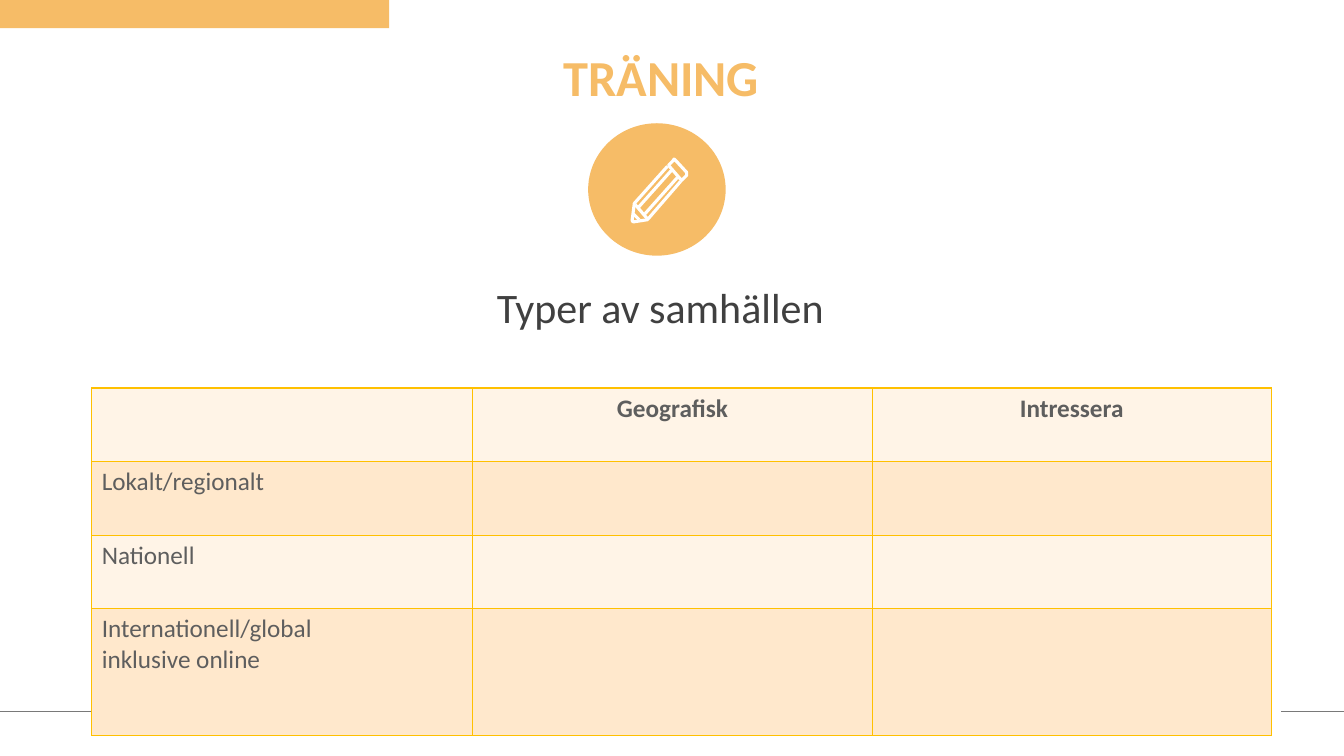
from lxml import etree
from pptx import Presentation
from pptx.dml.color import RGBColor
from pptx.enum import shapes, text
from pptx.oxml import ns
from pptx.util import Inches, Pt

FONT = "Calibri"
ORANGE, WHITE, GREY = "F6BC67", "FFFFFF", "5E5E5E"
GOLD = "FFC000"
BANDS = ["FFF4E7", "FFE8CC"]
COLUMNS = [3.78, 3.96, 3.96]
ROWS = [0.73, 0.73, 0.73, 1.26]
COMMUNITIES = [
    [[], ["Geografisk"], ["Intressera"]],
    [["Lokalt/regionalt"], [], []],
    [["Nationell"], [], []],
    [["Internationell/global", "inklusive online"], [], []],
]
PENCIL = [
    [(6.81, 1.71), (6.7, 1.59), (6.69, 1.58), (6.68, 1.58), (6.68, 1.59),
     (6.63, 1.64), (6.76, 1.79), (6.81, 1.74), (6.81, 1.71)],
    [(6.72, 1.76), (6.39, 2.13)],
    [(6.62, 1.65), (6.29, 2.02), (6.29, 2.03), (6.27, 2.18), (6.27, 2.19),
     (6.28, 2.2), (6.29, 2.2), (6.42, 2.18), (6.43, 2.17), (6.75, 1.8)],
    [(6.33, 2.06), (6.66, 1.69)],
    [(6.34, 2.18), (6.28, 2.12)],
    [(6.3, 2.03), (6.42, 2.17)],
]


def colour(value):
    return RGBColor.from_string(value)


def add_run(paragraph, words, size, tint, bold=False):
    run = paragraph.add_run()
    run.text = words
    run.font.name = FONT
    run.font.size = Pt(size)
    run.font.bold = bold
    run.font.color.rgb = colour(tint)


def add_filled(slide, preset, box, outlined=False):
    figure = slide.shapes.add_shape(preset, *map(Inches, box))
    figure.shadow.inherit = False
    figure.fill.solid()
    figure.fill.fore_color.rgb = colour(ORANGE)
    if outlined:
        figure.line.color.rgb = colour(ORANGE)
        figure.line.width = Pt(1)
    else:
        figure.line.fill.background()


def add_rule(slide, start, end, y):
    rule = slide.shapes.add_connector(
        shapes.MSO_CONNECTOR.STRAIGHT, Inches(start), Inches(y), Inches(end), Inches(y))
    rule.line.color.rgb = colour("797979")
    rule.line.width = Pt(0.5)
    etree.SubElement(rule._element.spPr, ns.qn("a:effectLst"))


def add_heading(slide, box, words, size, tint, align, bold=False):
    frame = slide.shapes.add_textbox(*map(Inches, box)).text_frame
    frame.word_wrap = True
    paragraph = frame.paragraphs[0]
    paragraph.alignment = align
    paragraph.line_spacing = 0.9
    add_run(paragraph, words, size, tint, bold)


def add_stroke(slide, points):
    corners = [(Inches(x), Inches(y)) for x, y in points]
    builder = slide.shapes.build_freeform(*corners[0])
    builder.add_line_segments(corners[1:], close=points[0] == points[-1])
    stroke = builder.convert_to_shape()
    stroke.shadow.inherit = False
    stroke.fill.background()
    stroke.line.color.rgb = colour(WHITE)
    stroke.line.width = Pt(2.25)


def set_borders(cell):
    properties = cell._tc.get_or_add_tcPr()
    for position, side in enumerate(["lnL", "lnR", "lnT", "lnB"]):
        border = etree.Element(ns.qn(f"a:{side}"), w=str(Pt(1)))
        fill = etree.SubElement(border, ns.qn("a:solidFill"))
        etree.SubElement(fill, ns.qn("a:srgbClr"), val=GOLD)
        properties.insert(position, border)


def fill_cell(cell, lines, band, header):
    cell.fill.solid()
    cell.fill.fore_color.rgb = colour(band)
    set_borders(cell)
    frame = cell.text_frame
    for index, words in enumerate(lines):
        paragraph = frame.add_paragraph() if index else frame.paragraphs[0]
        if header:
            paragraph.alignment = text.PP_ALIGN.CENTER
        add_run(paragraph, words, 18, GREY, header)


def add_communities(slide):
    table = slide.shapes.add_table(
        len(ROWS), len(COLUMNS), Inches(0.91), Inches(3.85),
        Inches(sum(COLUMNS)), Inches(sum(ROWS))).table
    table.horz_banding = False
    for column, width in zip(table.columns, COLUMNS):
        column.width = Inches(width)
    for r, (row, height) in enumerate(zip(table.rows, ROWS)):
        row.height = Inches(height)
        for cell, lines in zip(row.cells, COMMUNITIES[r]):
            fill_cell(cell, lines, BANDS[r % 2], header=r == 0)


def main():
    deck = Presentation()
    deck.slide_width, deck.slide_height = Inches(13.33), Inches(7.5)
    slide = deck.slides.add_slide(deck.slide_layouts[6])

    add_filled(slide, shapes.MSO_SHAPE.RECTANGLE, (0, 0, 3.86, 0.28))
    add_rule(slide, 0, 10.63, 7.06)
    add_rule(slide, 12.71, 13.33, 7.06)
    add_heading(slide, (5.49, 0.48, 2.27, 0.69), "TRÄNING", 36, ORANGE,
                text.PP_ALIGN.LEFT, bold=True)
    add_filled(slide, shapes.MSO_SHAPE.FLOWCHART_CONNECTOR,
               (5.84, 1.23, 1.35, 1.3), outlined=True)
    for points in PENCIL:
        add_stroke(slide, points)
    add_communities(slide)
    add_heading(slide, (4.36, 2.8, 4.38, 0.69), "Typer av samhällen", 30, "404040",
                text.PP_ALIGN.CENTER)

    deck.save("out.pptx")


if __name__ == "__main__":
    main()
